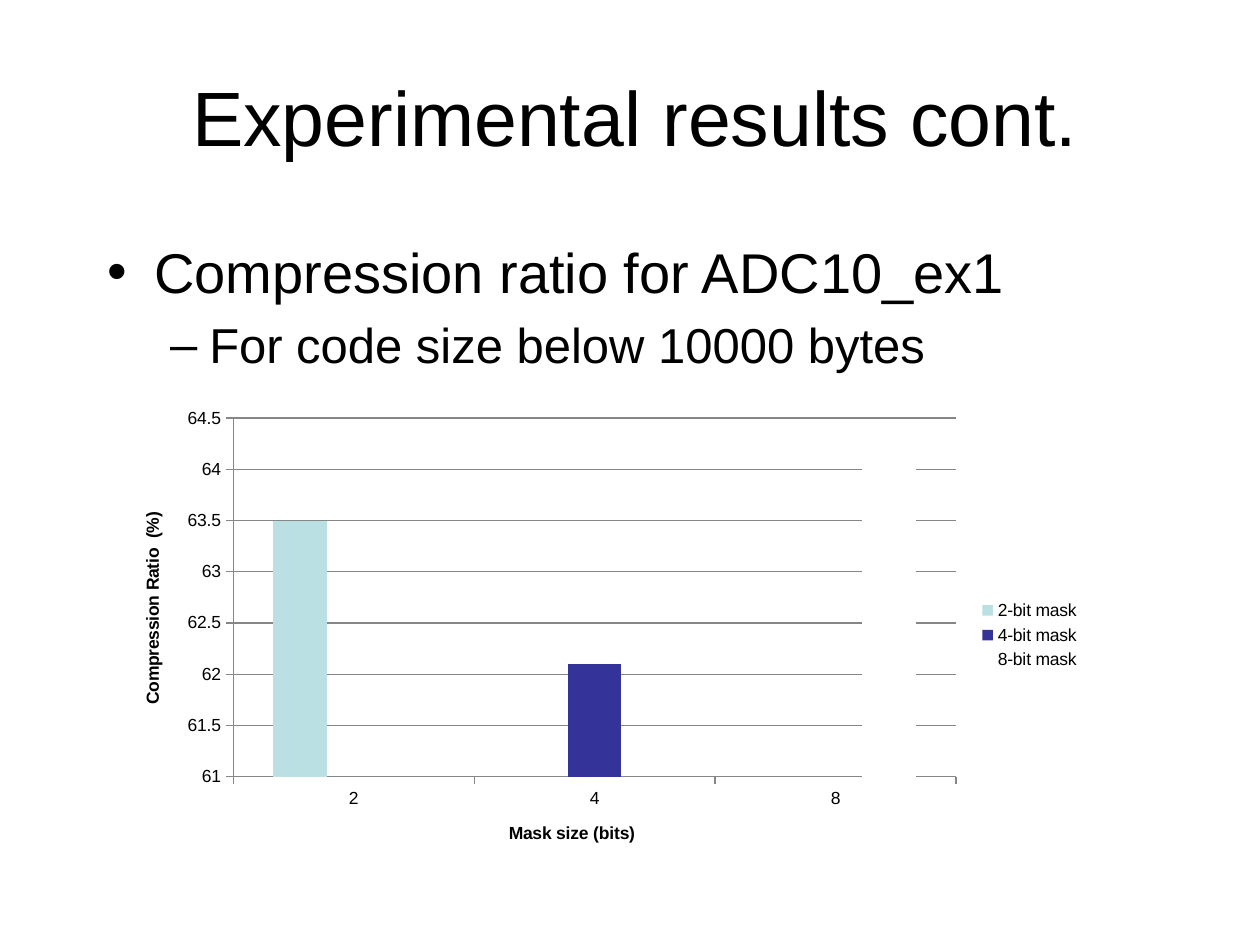
from lxml import etree
from pptx import Presentation
from pptx.chart.data import CategoryChartData
from pptx.dml.color import RGBColor
from pptx.enum.chart import XL_CHART_TYPE, XL_LEGEND_POSITION, XL_TICK_MARK
from pptx.enum.text import MSO_ANCHOR, PP_ALIGN
from pptx.oxml import parse_xml
from pptx.oxml.ns import nsdecls, qn
from pptx.util import Cm, Pt

COLUMNS = XL_CHART_TYPE.COLUMN_CLUSTERED
RIGHT = XL_LEGEND_POSITION.RIGHT
OUTSIDE = XL_TICK_MARK.OUTSIDE
MIDDLE, TOP = MSO_ANCHOR.MIDDLE, MSO_ANCHOR.TOP
CENTER, LEFT = PP_ALIGN.CENTER, PP_ALIGN.LEFT

# Content
TITLE = "Experimental results cont."
BULLETS = [  # text, level, size, marker, left margin and hanging indent in cm
    ("Compression ratio for ADC10_ex1", 0, 32, "•", 0.95, 0.95),
    ("For code size below 10000 bytes", 1, 28, "–", 2.06, 0.79),
]
MASK_SIZES = ["2", "4", "8"]
SERIES = [
    ("2-bit mask", (63.5, None, None), "aqua"),
    ("4-bit mask", (None, 62.1, None), "navy"),
    ("8-bit mask", (None, None, 64.2), "white"),
]
AXIS_TITLES = {"category": "Mask size (bits)", "value": "Compression Ratio  (%)"}
VALUE_SCALE = {"minimum_scale": 61, "maximum_scale": 64.5, "major_unit": 0.5}
PLOT_AREA = {"x": 0.12, "y": 0.04, "w": 0.74, "h": 0.76}

# Style
FONT = "Arial"
COLORS = {"black": "000000", "white": "FFFFFF", "aqua": "BBE0E3",
          "navy": "333399", "grid": "868686"}
BOXES = {"title": (1.91, 1.07, 21.8, 2.54), "body": (1.91, 4.67, 21.8, 12.27),
         "chart": (2.34, 8.05, 19.69, 9.51)}


def rgb(name):
    return RGBColor.from_string(COLORS[name])


def style_font(font, size, **extra):
    for name, value in {"name": FONT, "size": Pt(size), **extra}.items():
        setattr(font, name, value)
    font.color.rgb = rgb("black")


def add_text_frame(slide, box, anchor):
    tf = slide.shapes.add_textbox(*map(Cm, BOXES[box])).text_frame
    tf.word_wrap = True
    tf.vertical_anchor = anchor
    return tf


def write(p, text, size, align):
    p.alignment = align
    r = p.add_run()
    r.text = text
    style_font(r.font, size)


def set_bullet(p, marker, margin, hanging):
    p_pr = p._p.get_or_add_pPr()
    p_pr.set("marL", str(Cm(margin)))
    p_pr.set("indent", str(-Cm(hanging)))
    etree.SubElement(p_pr, qn("a:buFont")).set("typeface", FONT)
    etree.SubElement(p_pr, qn("a:buChar")).set("char", marker)


def style_axis(axis, title):
    axis.major_tick_mark = OUTSIDE
    axis.format.line.color.rgb = rgb("grid")
    style_font(axis.tick_labels.font, 10)
    tf = axis.axis_title.text_frame
    tf.text = title
    style_font(tf.paragraphs[0].runs[0].font, 10, bold=True)


def place_plot(chart):
    plot_area = chart._chartSpace.chart.plotArea
    for old in plot_area.findall(qn("c:layout")):
        plot_area.remove(old)
    sizes = "".join(f'<c:{k} val="{v}"/>' for k, v in PLOT_AREA.items())
    plot_area.insert(0, parse_xml(
        f'<c:layout {nsdecls("c")}><c:manualLayout><c:layoutTarget val="inner"/>'
        f'<c:xMode val="edge"/><c:yMode val="edge"/>{sizes}'
        '</c:manualLayout></c:layout>'))


def add_ratio_chart(slide):
    data = CategoryChartData()
    data.categories = MASK_SIZES
    for name, values, _ in SERIES:
        data.add_series(name, values)
    chart = slide.shapes.add_chart(COLUMNS, *map(Cm, BOXES["chart"]), data).chart
    style_font(chart.font, 10)
    chart.has_title = False
    chart.has_legend = True
    chart.legend.position = RIGHT
    chart.legend.include_in_layout = False
    style_font(chart.legend.font, 10)

    # Columns
    plot = chart.plots[0]
    plot.gap_width, plot.overlap, plot.vary_by_categories = 150, 0, False
    for series, (_, _, color) in zip(plot.series, SERIES):
        series.format.fill.solid()
        series.format.fill.fore_color.rgb = rgb(color)

    # Axes
    style_axis(chart.category_axis, AXIS_TITLES["category"])
    axis = chart.value_axis
    style_axis(axis, AXIS_TITLES["value"])
    for name, value in VALUE_SCALE.items():
        setattr(axis, name, value)
    axis.tick_labels.number_format = "General"
    axis.tick_labels.number_format_is_linked = False
    axis.major_gridlines.format.line.color.rgb = rgb("grid")
    place_plot(chart)


def main():
    prs = Presentation()
    prs.slide_width, prs.slide_height = Cm(25.4), Cm(19.05)
    slide = prs.slides.add_slide(prs.slide_layouts[6])

    # Title
    tf = add_text_frame(slide, "title", MIDDLE)
    write(tf.paragraphs[0], TITLE, 44, CENTER)

    # Bullets
    tf = add_text_frame(slide, "body", TOP)
    for i, (text, level, size, marker, margin, hanging) in enumerate(BULLETS):
        p = tf.add_paragraph() if i else tf.paragraphs[0]
        p.level = level
        p.space_before = Pt(round(size * 0.2, 1))
        set_bullet(p, marker, margin, hanging)
        write(p, text, size, LEFT)

    # Chart
    add_ratio_chart(slide)
    prs.save("out.pptx")


if __name__ == "__main__":
    main()
